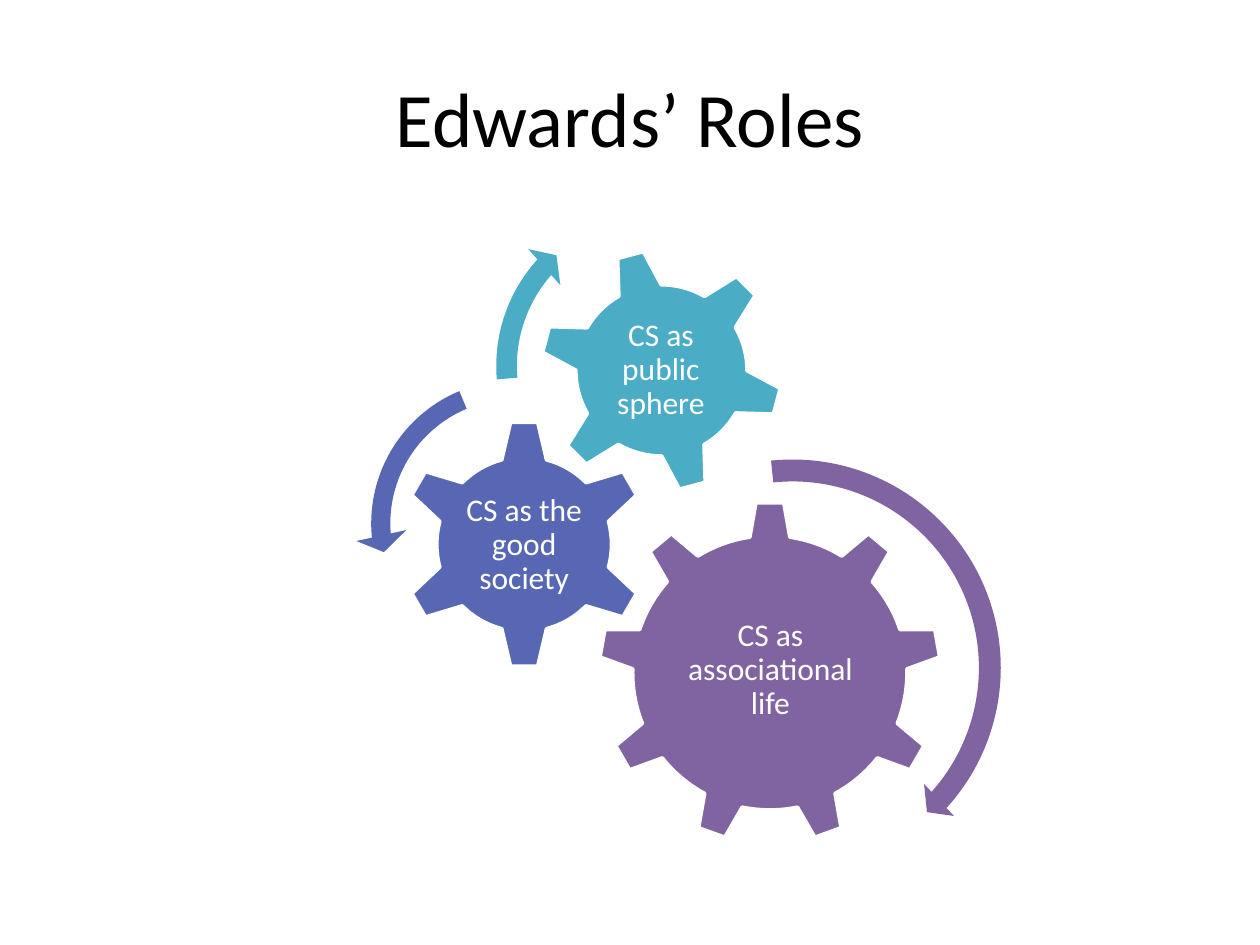
from dataclasses import dataclass

import pptx
import pptx.dml.color
import pptx.enum.shapes
import pptx.enum.text
import pptx.util

Inches = pptx.util.Inches
Pt = pptx.util.Pt
SHAPE = pptx.enum.shapes.MSO_SHAPE

COLORS = {
    "purple": "8064A2",
    "blue": "5767B4",
    "teal": "4BACC6",
    "white": "FFFFFF",
    "black": "000000",
}


@dataclass(frozen=True)
class Box:
    left: float
    top: float
    width: float
    height: float

    def lengths(self) -> list[int]:
        return [Inches(v) for v in (self.left, self.top, self.width, self.height)]


@dataclass(frozen=True)
class Gear:
    kind: SHAPE
    box: Box
    color: str
    text: str
    text_box: Box
    rotation: float = 0


@dataclass(frozen=True)
class Arrow:
    kind: SHAPE
    box: Box
    color: str
    adjustments: tuple[float, ...]


GEARS = [
    Gear(SHAPE.GEAR_9, Box(4.75, 3.98, 2.72, 2.72), "purple",
         "CS as associational life", Box(5.3, 4.62, 1.63, 1.4)),
    Gear(SHAPE.GEAR_6, Box(3.17, 3.33, 1.98, 1.98), "blue",
         "CS as the good society", Box(3.67, 3.84, 0.98, 0.98)),
    Gear(SHAPE.GEAR_6, Box(4.28, 1.97, 1.94, 1.94), "teal",
         "CS as public sphere", Box(4.7, 2.39, 1.09, 1.09), rotation=345),
]

ARROWS = [
    Arrow(SHAPE.CIRCULAR_ARROW, Box(4.55, 3.56, 3.48, 3.48), "purple",
          (0.05, 2.99, 25.24, 158.45, 0.05)),
    Arrow(SHAPE.LEFT_CIRCULAR_ARROW, Box(2.82, 2.89, 2.53, 2.53), "blue",
          (0.06, 4.3, 104.89, 148.38, 0.08)),
    Arrow(SHAPE.CIRCULAR_ARROW, Box(3.83, 1.54, 2.73, 2.73), "teal",
          (0.06, 3.94, 133.14, 105.08, 0.07)),
]


def rgb(name: str) -> pptx.dml.color.RGBColor:
    return pptx.dml.color.RGBColor.from_string(COLORS[name])


def add_text(s, text: str, box: Box, *, size: float, color: str,
             inset: float = 0.05, spacing: float = 1.0) -> None:
    tf = s.shapes.add_textbox(*box.lengths()).text_frame
    tf.word_wrap = True
    tf.vertical_anchor = pptx.enum.text.MSO_ANCHOR.MIDDLE
    tf.margin_left = tf.margin_right = Inches(inset)
    tf.margin_top = tf.margin_bottom = Inches(inset)
    p = tf.paragraphs[0]
    p.alignment = pptx.enum.text.PP_ALIGN.CENTER
    p.line_spacing = spacing
    r = p.add_run()
    r.text = text
    r.font.name = "Calibri"
    r.font.size = Pt(size)
    r.font.color.rgb = rgb(color)


def add_filled(s, kind: SHAPE, box: Box, color: str):
    sp = s.shapes.add_shape(kind, *box.lengths())
    sp.shadow.inherit = False
    sp.fill.solid()
    sp.fill.fore_color.rgb = rgb(color)
    return sp


def add_gear(s, gear: Gear) -> None:
    sp = add_filled(s, gear.kind, gear.box, gear.color)
    sp.rotation = gear.rotation
    sp.line.color.rgb = rgb("white")
    sp.line.width = Pt(2)
    add_text(s, gear.text, gear.text_box, size=18, color="white",
             inset=0.03, spacing=0.9)


def add_arrow(s, arrow: Arrow) -> None:
    sp = add_filled(s, arrow.kind, arrow.box, arrow.color)
    sp.line.fill.background()
    for i, value in enumerate(arrow.adjustments):
        sp.adjustments[i] = value


def main() -> None:
    prs = pptx.Presentation()
    prs.slide_width = Inches(10)
    prs.slide_height = Inches(7.5)
    s = prs.slides.add_slide(prs.slide_layouts[6])
    add_text(s, "Edwards’ Roles", Box(0.5, 0.3, 9, 1.25), size=44, color="black")
    for gear in GEARS:
        add_gear(s, gear)
    for arrow in ARROWS:
        add_arrow(s, arrow)
    prs.save("out.pptx")


if __name__ == "__main__":
    main()
